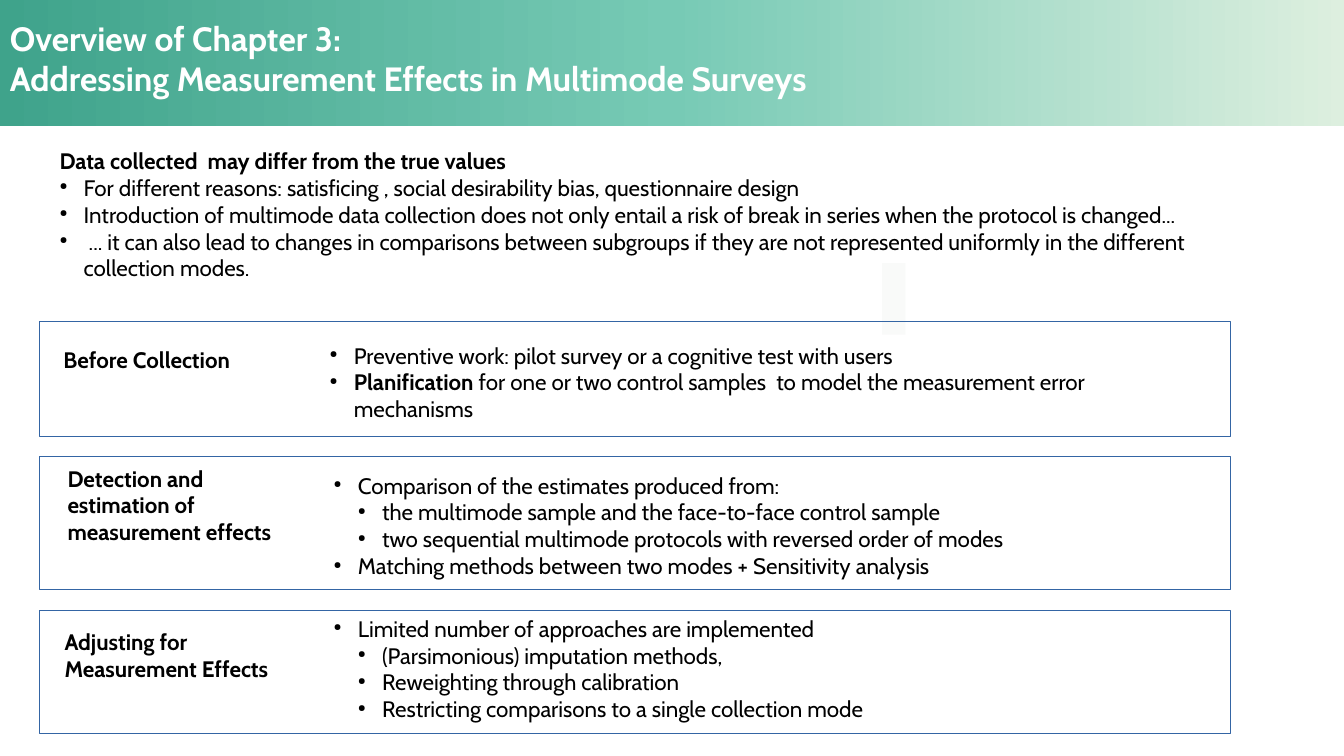
"""Build the Chapter 3 overview slide on measurement effects in multimode surveys."""
from lxml import etree
from pptx import Presentation
from pptx.dml.color import RGBColor
from pptx.enum.shapes import MSO_SHAPE
from pptx.oxml.ns import qn
from pptx.util import Pt

RECTANGLE = MSO_SHAPE.RECTANGLE
PX = 9144
FONT = "Cabin"
INDENT = 24
COLORS = {
    "banner_start": "3FA38B",
    "banner_middle": "77CAB5",
    "banner_end": "DDEFDF",
    "title": "FFFFFF",
    "text": "000000",
    "frame": "3465A4",
    "accent": "F9FAF9",
}
TITLE = ["Overview of Chapter 3:", "Addressing Measurement Effects in Multimode Surveys"]
INTRO_HEADING = "Data collected  may differ from the true values"
INTRO_BULLETS = [
    "For different reasons: satisficing , social desirability bias, questionnaire design",
    "Introduction of multimode data collection does not only entail a risk of break in series "
    "when the protocol is changed...",
    " ... it can also lead to changes in comparisons between subgroups if they are not "
    "represented uniformly in the different collection modes.",
]
STAGES = [
    {
        "frame": (39, 319, 1181, 114),
        "heading": "Before Collection",
        "heading_offset": (24, 24),
        "bullets_offset": (288, 20),
        "bullets": [
            (0, "", "Preventive work: pilot survey or a cognitive test with users"),
            (0, "Planification", " for one or two control samples  to model the measurement "
                                 "error mechanisms"),
        ],
    },
    {
        "frame": (39, 453, 1181, 132),
        "heading": "Detection and estimation of measurement effects",
        "heading_offset": (28, 8),
        "bullets_offset": (292, 15),
        "bullets": [
            (0, "", "Comparison of the estimates produced from:"),
            (1, "", "the multimode sample and the face-to-face control sample"),
            (1, "", "two sequential multimode protocols with reversed order of modes"),
            (0, "", "Matching methods between two modes + Sensitivity analysis"),
        ],
    },
    {
        "frame": (39, 606, 1181, 122),
        "heading": "Adjusting for Measurement Effects",
        "heading_offset": (25, 17),
        "bullets_offset": (292, 4),
        "bullets": [
            (0, "", "Limited number of approaches are implemented"),
            (1, "", "(Parsimonious) imputation methods,"),
            (1, "", "Reweighting through calibration"),
            (1, "", "Restricting comparisons to a single collection mode"),
        ],
    },
]


def scaled(box):
    """Turn a box in px into EMU."""
    return [length * PX for length in box]


def add_rectangle(page, box, fill=None, line=None):
    """Add a plain rectangle with an optional fill and hairline."""
    shape = page.shapes.add_shape(RECTANGLE, *scaled(box))
    shape.shadow.inherit = False
    if fill:
        shape.fill.solid()
        shape.fill.fore_color.rgb = RGBColor.from_string(COLORS[fill])
    else:
        shape.fill.background()
    if line:
        shape.line.color.rgb = RGBColor.from_string(COLORS[line])
        shape.line.width = Pt(0)
    else:
        shape.line.fill.background()
    return shape


def add_text_frame(page, box, inset_x=0, inset_y=0):
    """Add a wrapping text box and return its text frame."""
    frame = page.shapes.add_textbox(*scaled(box)).text_frame
    frame.word_wrap = True
    frame.margin_left = frame.margin_right = inset_x * PX
    frame.margin_top = frame.margin_bottom = inset_y * PX
    return frame


def next_para(frame):
    """Return the empty first paragraph or a new one."""
    first = frame.paragraphs[0]
    return frame.add_paragraph() if first.runs else first


def add_span(para, text, size=16, bold=False, color="text"):
    """Add formatted text to a paragraph."""
    span = para.add_run()
    span.text = text
    span.font.name = FONT
    span.font.size = Pt(size)
    span.font.bold = bold
    span.font.color.rgb = RGBColor.from_string(COLORS[color])


def add_bullet(frame, text, level=0, lead=""):
    """Add a bulleted paragraph, with an optional bold lead."""
    para = next_para(frame)
    para.level = level
    properties = para._p.get_or_add_pPr()
    properties.set("marL", str(INDENT * (level + 1) * PX))
    properties.set("indent", str(-INDENT * PX))
    bullet_color = etree.SubElement(properties, qn("a:buClr"))
    etree.SubElement(bullet_color, qn("a:srgbClr"), val=COLORS["text"])
    etree.SubElement(properties, qn("a:buSzPct"), val="45000")
    etree.SubElement(properties, qn("a:buChar"), char="●")
    if lead:
        add_span(para, lead, bold=True)
    add_span(para, text)


def add_banner(page, box):
    """Draw the gradient banner with the title lines."""
    left, top, width, height = box
    banner = add_rectangle(page, box)
    banner.fill.gradient()
    banner.fill.gradient_angle = 0
    stops = banner._element.spPr.find(qn("a:gradFill")).find(qn("a:gsLst"))
    for stop in list(stops):
        stops.remove(stop)
    for index, name in enumerate(("banner_start", "banner_middle", "banner_end")):
        stop = etree.SubElement(stops, qn("a:gs"), pos=str(index * 50000))
        etree.SubElement(stop, qn("a:srgbClr"), val=COLORS[name])
    frame = add_text_frame(page, (left, top + 13, width - 33, height - 35), 10, 5)
    for line in TITLE:
        add_span(next_para(frame), line, size=24, bold=True, color="title")


def add_intro(page, box):
    """Write the opening statement and its bullets."""
    frame = add_text_frame(page, box)
    add_span(next_para(frame), INTRO_HEADING, bold=True)
    for text in INTRO_BULLETS:
        add_bullet(frame, text)


def add_stage(page, box, stage):
    """Draw one framed stage with its heading and bullets."""
    left, top, width, height = box
    add_rectangle(page, box, line="frame")
    x, y = stage["heading_offset"]
    heading = add_text_frame(page, (left + x, top + y, 236, height - y))
    add_span(next_para(heading), stage["heading"], bold=True)
    x, y = stage["bullets_offset"]
    frame = add_text_frame(page, (left + x, top + y, 866, height - y))
    for level, lead, text in stage["bullets"]:
        add_bullet(frame, text, level, lead)


def main():
    """Build and save the deck."""
    deck = Presentation()
    deck.slide_width, deck.slide_height = scaled((1333, 750))
    page = deck.slides.add_slide(deck.slide_layouts[6])
    add_banner(page, (0, 0, 1333, 125))
    add_rectangle(page, (875, 261, 23, 71), fill="accent")
    add_intro(page, (59, 146, 1161, 160))
    for stage in STAGES:
        add_stage(page, stage["frame"], stage)
    deck.save("out.pptx")


if __name__ == "__main__":
    main()
